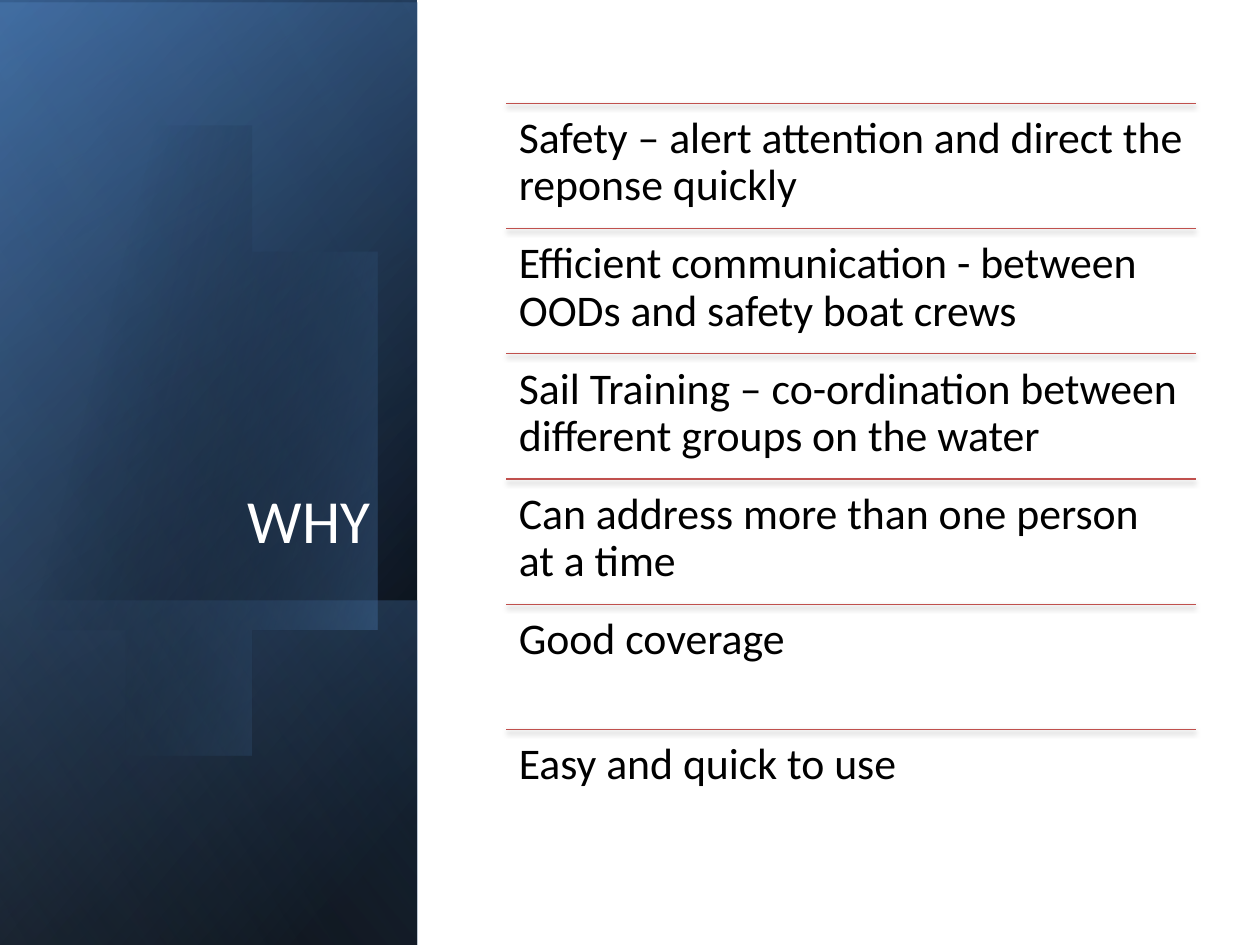
"""Build the WHY slide: a shaded side panel and a ruled list of reasons."""
from lxml import etree
from pptx import Presentation, util as u
from pptx.dml.color import RGBColor
from pptx.enum import shapes, text
from pptx.oxml.ns import qn

COLOURS = {"black": "000000", "white": "FFFFFF", "navy": "376092",
           "blue": "4F81BD", "pale": "95B3D7", "rule": "C0504D"}
TITLE = "WHY"
REASONS = [
    "Safety – alert attention and direct the reponse quickly",
    "Efficient communication - between OODs and safety boat crews",
    "Sail Training – co-ordination between different groups on the water",
    "Can address more than one person at a time",
    "Good coverage",
    "Easy and quick to use",
]
WIDTH, HEIGHT, PANEL_WIDTH = 10, 7.5, 3.31
LIST_LEFT, LIST_TOP, LIST_WIDTH, ROW_HEIGHT = 4.02, 0.82, 5.47, 0.994

# Each stop is position, colour and opacity, all in percent.
BACK_PANELS = [
    (0, HEIGHT, 50, [(8, "black", 100), (100, "navy", 100)]),
    (0.02, HEIGHT, 30, [(0, "black", 0), (99, "blue", 46)]),
    (4.77, 2.74, 130, [(2, "blue", 29), (100, "black", 30)]),
]
FRONT_PANEL = (0, HEIGHT, 120, [(0, "black", 0), (99, "pale", 11)])
BLOB_START = (0.96, 1.14)
BLOB_CURVES = [
    [(1.71, 1.22), (2.44, 1.92), (2.73, 2.9)],
    [(3.07, 4.12), (2.62, 5.31), (1.71, 5.57)],
    [(1.14, 5.74), (0.53, 5.5), (0.07, 5)],
    [(-0.03, 4.88)],
    [(-0.25, 1.66)],
    [(-0.15, 1.54)],
    [(0.02, 1.37), (0.22, 1.25), (0.45, 1.18)],
    [(0.62, 1.13), (0.79, 1.12), (0.96, 1.14)],
]
BLOB_SHADE = (14, [(29, "black", 0), (100, "blue", 43)])


def colour(name):
    return RGBColor.from_string(COLOURS[name])


def shade(shape, angle, stops):
    shape.shadow.inherit = False
    shape.line.fill.background()
    shape.fill.gradient()
    shape.fill.gradient_angle = 360 - angle
    for stop, (position, name, opacity) in zip(shape.fill.gradient_stops, stops):
        stop.position = position / 100
        stop.color.rgb = colour(name)
    for node, (_, _, opacity) in zip(shape._element.iter(qn("a:srgbClr")), stops):
        etree.SubElement(node, qn("a:alpha"), val=str(opacity * 1000))


def add_panel(page, top, height, angle, stops):
    left = (PANEL_WIDTH - height) / 2
    turned_top = top + (height - PANEL_WIDTH) / 2
    panel = page.shapes.add_shape(
        shapes.MSO_SHAPE.RECTANGLE,
        *map(u.Inches, (left, turned_top, height, PANEL_WIDTH)))
    panel.rotation = 90
    panel._element.spPr.get_or_add_xfrm().set("flipH", "1")
    shade(panel, angle, stops)


def curve_points(start, first, second, end, steps=16):
    for step in range(1, steps + 1):
        t = step / steps
        weights = ((1 - t) ** 3, 3 * t * (1 - t) ** 2, 3 * t * t * (1 - t), t ** 3)
        yield tuple(sum(w * p[axis] for w, p in zip(weights, (start, first, second, end)))
                    for axis in (0, 1))


def add_blob(page):
    points = [BLOB_START]
    for segment in BLOB_CURVES:
        points += segment if len(segment) == 1 else curve_points(points[-1], *segment)
    builder = page.shapes.build_freeform(*points[0], scale=u.Inches(1))
    builder.add_line_segments(points[1:], close=True)
    shade(builder.convert_to_shape(), *BLOB_SHADE)


def write(box, words, size, name, align, anchor, spacing=None):
    frame = box.text_frame
    frame.word_wrap = True
    frame.vertical_anchor = anchor
    para = frame.paragraphs[0]
    para.alignment = align
    para.line_spacing = spacing
    span = para.add_run()
    span.text = words
    span.font.name, span.font.size = "Calibri", u.Pt(size)
    span.font.color.rgb = colour(name)
    return frame


def add_rule(page, top):
    rule = page.shapes.add_connector(
        shapes.MSO_CONNECTOR.STRAIGHT,
        *map(u.Inches, (LIST_LEFT, top, LIST_LEFT + LIST_WIDTH, top)))
    rule.line.width = u.Pt(0.75)
    rule.line.color.rgb = colour("rule")
    effects = etree.SubElement(rule._element.spPr, qn("a:effectLst"))
    shadow = etree.SubElement(effects, qn("a:outerShdw"), blurRad=str(u.Pt(3.1)),
                              dist=str(u.Pt(1.8)), dir="5400000", rotWithShape="0")
    tint = etree.SubElement(shadow, qn("a:srgbClr"), val=COLOURS["black"])
    etree.SubElement(tint, qn("a:alpha"), val="35000")


def add_reason(page, row, words):
    top = LIST_TOP + row * ROW_HEIGHT
    add_rule(page, top)
    box = page.shapes.add_textbox(
        *map(u.Inches, (LIST_LEFT, top, LIST_WIDTH, ROW_HEIGHT)))
    frame = write(box, words, 25, "black", text.PP_ALIGN.LEFT,
                  text.MSO_ANCHOR.TOP, spacing=0.9)
    frame.margin_left = frame.margin_right = u.Inches(0.1)
    frame.margin_top = frame.margin_bottom = u.Inches(0.1)


def main():
    deck = Presentation()
    deck.slide_width, deck.slide_height = u.Inches(WIDTH), u.Inches(HEIGHT)
    page = deck.slides.add_slide(deck.slide_layouts[5])
    for panel in BACK_PANELS:
        add_panel(page, *panel)
    add_blob(page)
    add_panel(page, *FRONT_PANEL)

    title = page.shapes.title
    title.left, title.top, title.width, title.height = map(
        u.Inches, (0.48, 1.84, 2.56, 2.62))
    write(title, TITLE, 35, "white", text.PP_ALIGN.RIGHT, text.MSO_ANCHOR.BOTTOM)
    page.shapes._spTree.append(title._element)

    for row, words in enumerate(REASONS):
        add_reason(page, row, words)
    deck.save("out.pptx")


if __name__ == "__main__":
    main()
